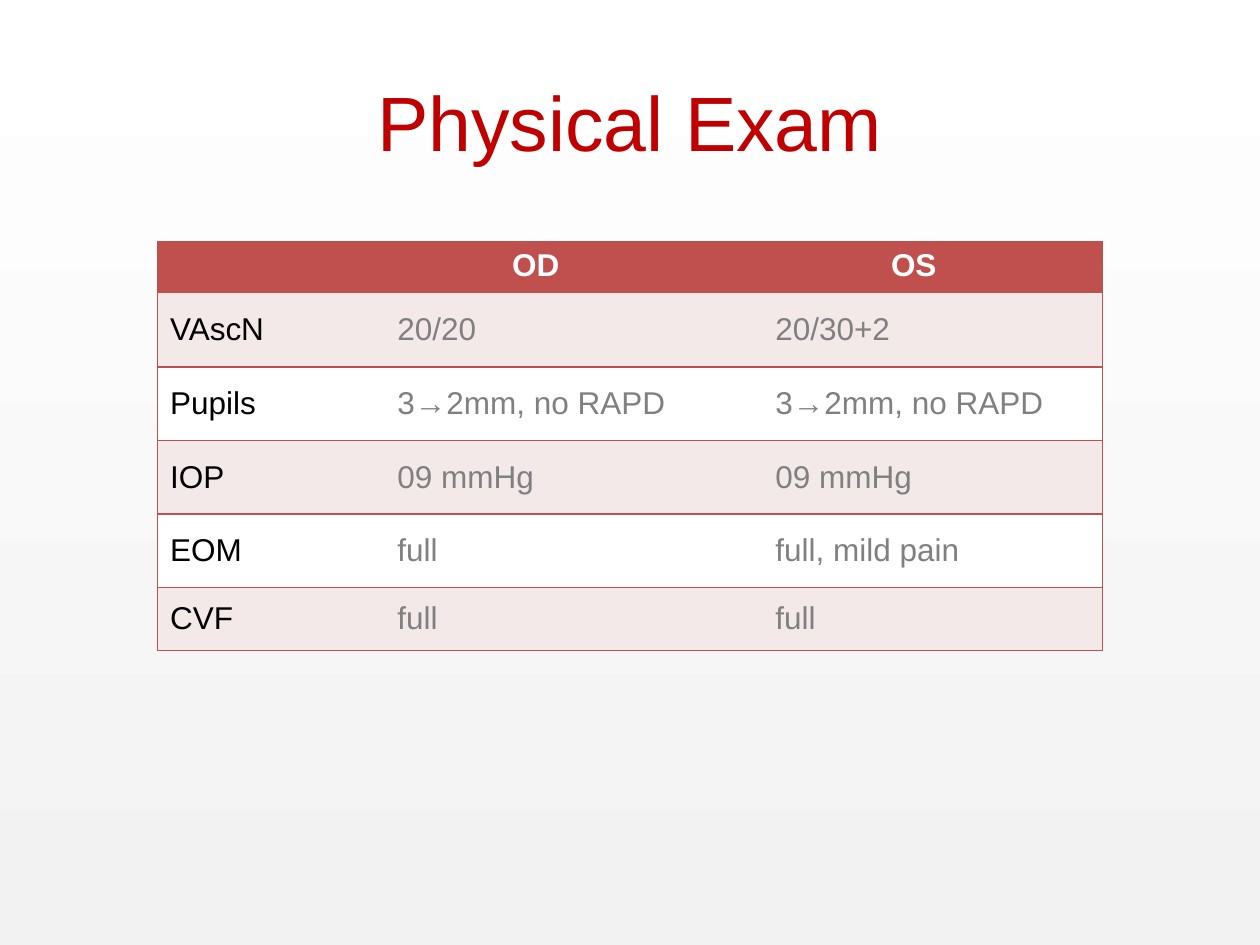
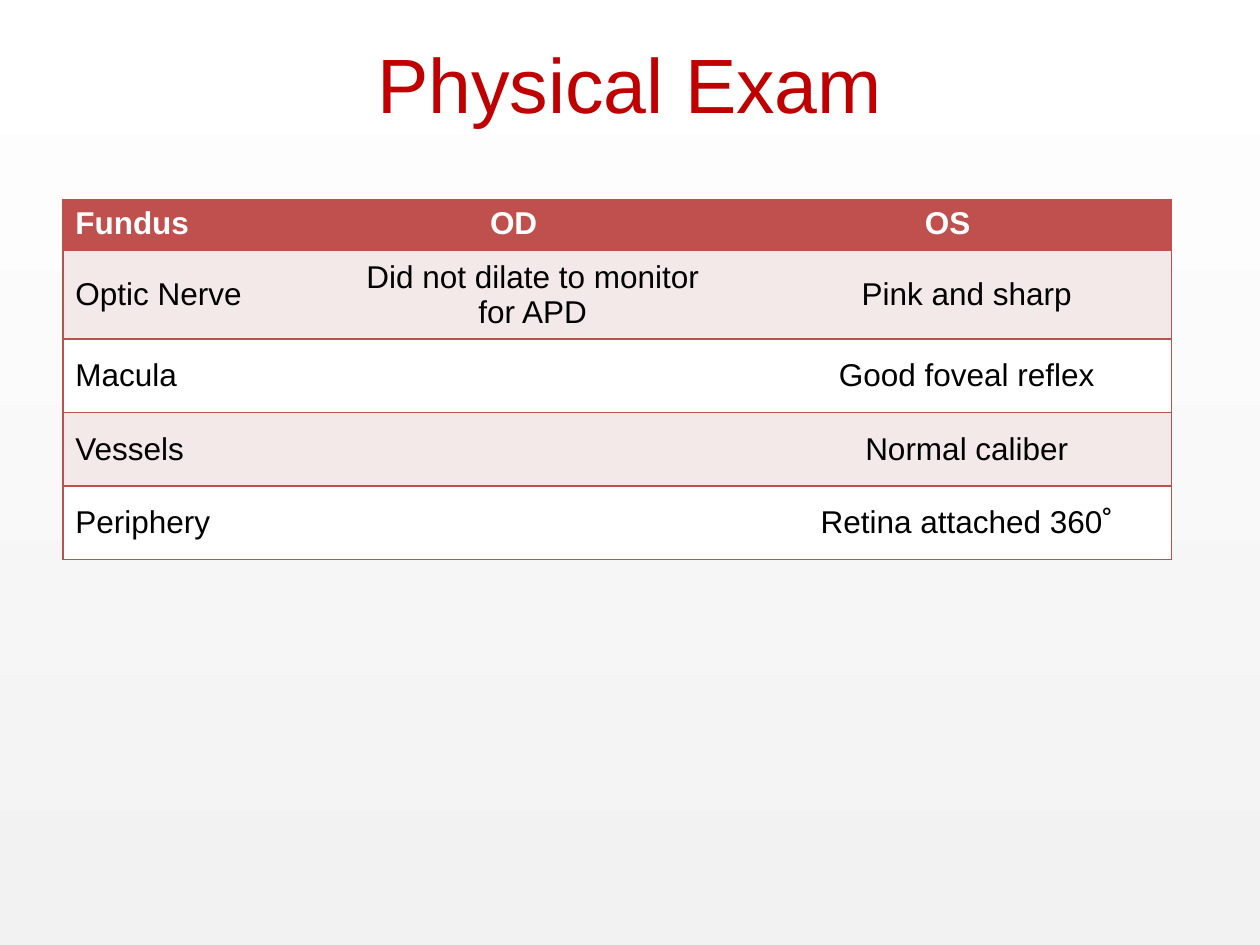
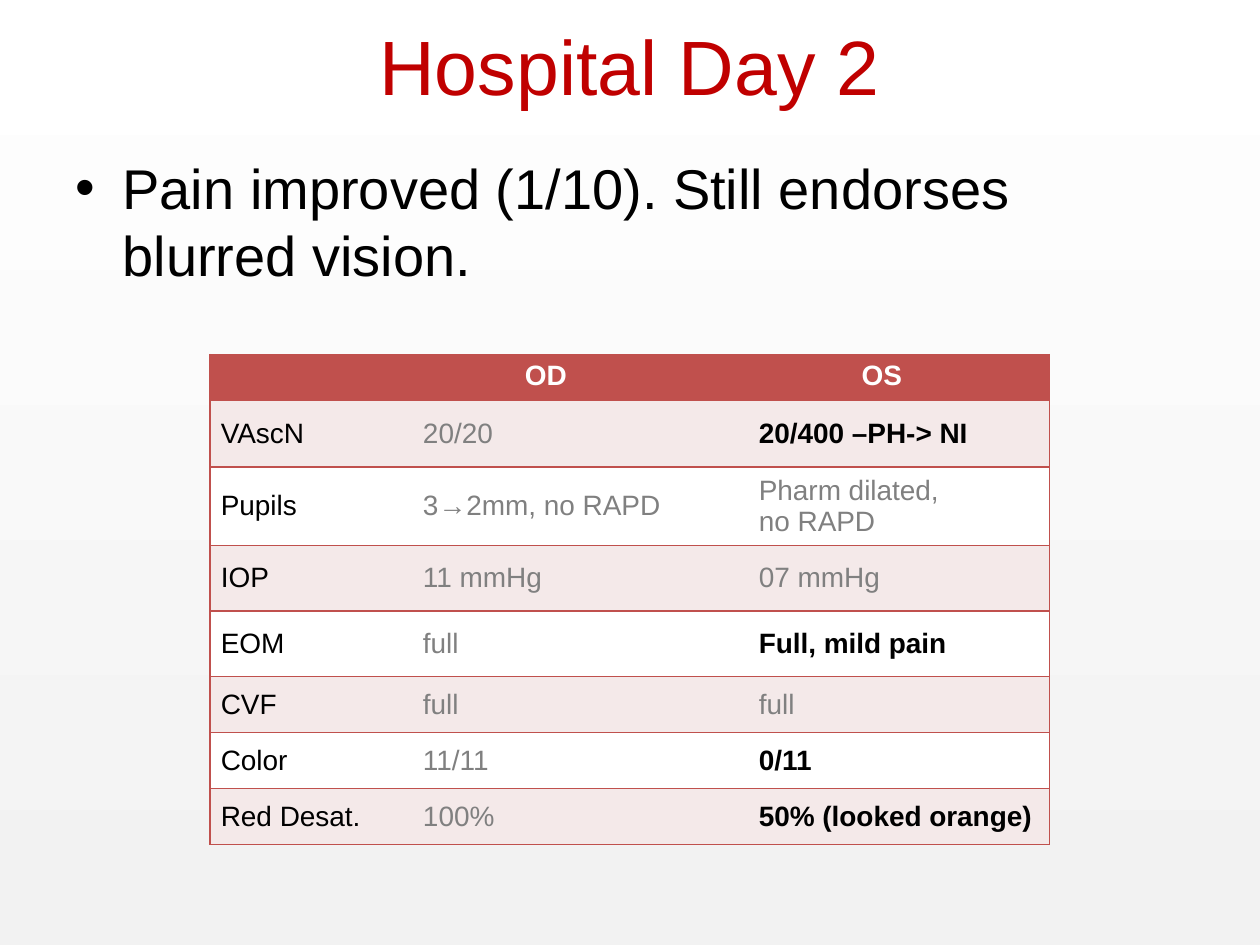
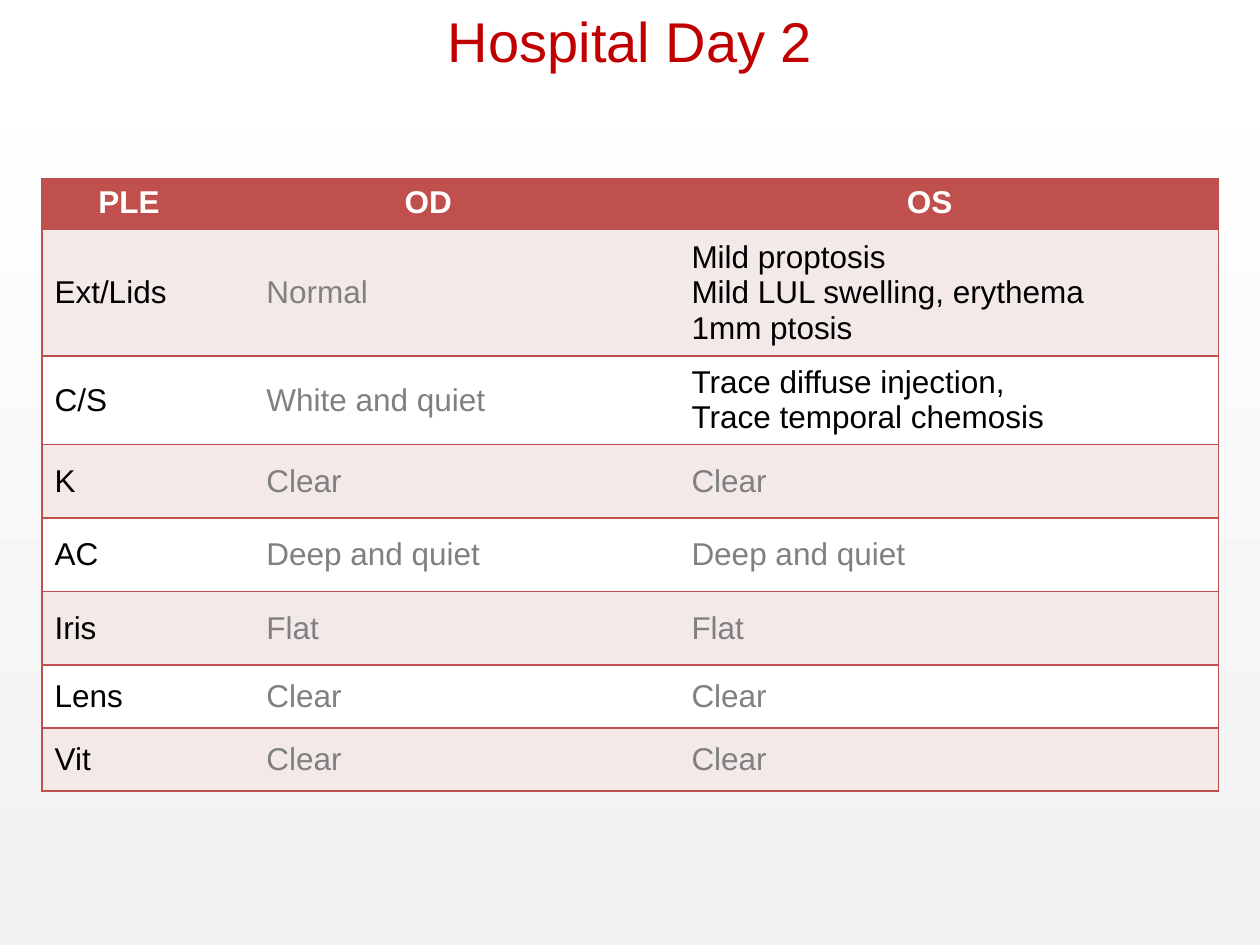
from lxml import etree
from pptx import Presentation
from pptx.dml.color import RGBColor
from pptx.enum import text as t
from pptx.oxml import ns
from pptx.util import Cm, Pt

FONT = "Arial"
TITLE_RED = RGBColor(0xC0, 0x00, 0x00)
TABLE_RED = RGBColor(0xC0, 0x50, 0x4D)
BAND_PINK = RGBColor(0xF4, 0xE9, 0xE9)
WHITE = RGBColor(0xFF, 0xFF, 0xFF)
PALE_GREY = RGBColor(0xF2, 0xF2, 0xF2)
GREY = RGBColor(0x80, 0x80, 0x80)
BLACK = RGBColor(0, 0, 0)

LEFT, CENTER = t.PP_ALIGN.LEFT, t.PP_ALIGN.CENTER
TOP, MIDDLE = t.MSO_ANCHOR.TOP, t.MSO_ANCHOR.MIDDLE


class ExamDeck:
    """Style of the deck, and the slide being filled."""

    def __init__(self):
        self.prs = Presentation()
        self.prs.slide_width, self.prs.slide_height = Cm(25.4), Cm(19.05)
        self.slide = None
        # Shared background: pale grey at the bottom, white at the top
        fill = self.prs.slide_master.background.fill
        fill.gradient()
        fill.gradient_angle = 90
        for stop, color in zip(fill.gradient_stops, (PALE_GREY, WHITE)):
            stop.color.rgb = color

    def new_slide(self, title, top, left=1.27, width=22.86, height=3.18, size=44):
        self.slide = self.prs.slides.add_slide(self.prs.slide_layouts[6])
        frame = self.text_box(left, top, width, height, MIDDLE)
        self.set_text(frame, title, size, TITLE_RED, align=CENTER)

    def text_box(self, left, top, width, height, anchor):
        box = self.slide.shapes.add_textbox(Cm(left), Cm(top), Cm(width), Cm(height))
        box.text_frame.word_wrap = True
        box.text_frame.vertical_anchor = anchor
        return box.text_frame

    def set_text(self, frame, content, size, color, bold=False, align=LEFT):
        frame.text = content
        look = {"name": FONT, "size": Pt(size), "bold": bold}
        for paragraph in frame.paragraphs:
            paragraph.alignment = align
            for run in paragraph.runs:
                for key, value in look.items():
                    setattr(run.font, key, value)
                run.font.color.rgb = color
            if not paragraph.runs:  # keeps an empty cell from growing its row
                etree.SubElement(paragraph._p, ns.qn("a:endParaRPr"), sz=str(size * 100))

    def bullet(self, content, left, top, width, height):
        frame = self.text_box(left, top, width, height, TOP)
        self.set_text(frame, content, 32, BLACK)
        props = frame.paragraphs[0]._p.get_or_add_pPr()
        indent = Cm(0.95)
        props.set("marL", str(indent))
        props.set("indent", str(-indent))
        etree.SubElement(props, ns.qn("a:buFont"), typeface=FONT)
        etree.SubElement(props, ns.qn("a:buChar"), char="•")

    def borders(self, cell, colored_sides):
        """Red rules on the given sides (of L, R, T, B), none on the others."""
        props = cell._tc.get_or_add_tcPr()
        for side in "LRTB":
            line = etree.SubElement(props, ns.qn(f"a:ln{side}"), w=str(Pt(1)))
            if side in colored_sides:
                solid = etree.SubElement(line, ns.qn("a:solidFill"))
                etree.SubElement(solid, ns.qn("a:srgbClr"), val=str(TABLE_RED))
            else:
                etree.SubElement(line, ns.qn("a:noFill"))

    def exam_table(self, rows, left, top, widths, heights, size=18, scale=1.0,
                   corner_align=CENTER, finding_color=GREY, finding_align=LEFT,
                   noted=(), noted_bold=False):
        """Eye findings; cells in noted (row, column) stand out in black."""
        table = self.slide.shapes.add_table(
            len(rows), len(widths), Cm(left), Cm(top),
            Cm(sum(widths)), Cm(sum(heights))).table
        table.horz_banding = False
        for column, width in zip(table.columns, widths):
            column.width = Cm(width)
        for row, height in zip(table.rows, heights):
            row.height = Cm(height)

        last = len(widths) - 1
        for r, entries in enumerate(rows):
            for c, entry in enumerate(entries):
                cell = table.cell(r, c)
                is_finding = r > 0 and c > 0
                self.borders(cell, "TB" + "L" * (c == 0) + "R" * (c == last))
                cell.fill.solid()
                cell.fill.fore_color.rgb = (
                    TABLE_RED if r == 0 else BAND_PINK if r % 2 else WHITE)
                layout = {
                    "margin_left": Cm((1.02 if is_finding else 0.25) * scale),
                    "margin_right": Cm(0.25 * scale),
                    "margin_top": Cm(0.13 * scale),
                    "margin_bottom": Cm(0.13 * scale),
                    "vertical_anchor": MIDDLE if r else TOP,
                }
                for key, value in layout.items():
                    setattr(cell, key, value)
                if r == 0:
                    look = {"color": WHITE, "bold": True,
                            "align": CENTER if c else corner_align}
                elif c == 0:
                    look = {"color": BLACK}
                elif (r, c) in noted:
                    look = {"color": BLACK, "bold": noted_bold, "align": finding_align}
                else:
                    look = {"color": finding_color, "align": finding_align}
                self.set_text(cell.text_frame, entry, size, **look)


def main():
    deck = ExamDeck()

    # Vision, pupils and pressure on admission
    deck.new_slide("Physical Exam", top=0.84)
    deck.exam_table(
        [("", "OD", "OS"),
         ("VAscN", "20/20", "20/30+2"),
         ("Pupils", "3→2mm, no RAPD", "3→2mm, no RAPD"),
         ("IOP", "09 mmHg", "09 mmHg"),
         ("EOM", "full", "full, mild pain"),
         ("CVF", "full", "full")],
        left=3.18, top=4.87, widths=[3.81, 7.62, 7.62],
        heights=[1.03, 1.5] + [1.48] * 3 + [1.27])

    # Fundus on admission
    deck.new_slide("Physical Exam", top=0.08)
    deck.exam_table(
        [("Fundus", "OD", "OS"),
         ("Optic Nerve", "Did not dilate to monitor for APD", "Pink and sharp"),
         ("Macula", "", "Good foveal reflex"),
         ("Vessels", "", "Normal caliber"),
         ("Periphery", "", "Retina attached 360˚")],
        left=1.27, top=4.02, widths=[4.85, 8.47, 9.03],
        heights=[1.03, 1.5] + [1.48] * 3,
        corner_align=LEFT, finding_color=BLACK, finding_align=CENTER)

    # Day 2: symptoms and vision
    deck.new_slide("Hospital Day 2", top=-0.28)
    deck.bullet("Pain improved (1/10). Still endorses blurred vision.",
                left=1.27, top=2.97, width=22.86, height=14.05)
    deck.exam_table(
        [("", "OD", "OS"),
         ("VAscN", "20/20", "20/400 –PH-> NI"),
         ("Pupils", "3→2mm, no RAPD", "Pharm dilated,\nno RAPD"),
         ("IOP", "11 mmHg", "07 mmHg"),
         ("EOM", "full", "Full, mild pain"),
         ("CVF", "full", "full"),
         ("Color", "11/11", "0/11"),
         ("Red Desat.", "100%", "50% (looked orange)")],
        left=4.23, top=7.15, widths=[3.39, 6.77, 6.77],
        heights=[0.92, 1.34] + [1.32] * 3 + [1.13] * 3,
        size=16, scale=0.89,
        noted={(1, 2), (4, 2), (6, 2), (7, 2)}, noted_bold=True)

    # Day 2: external and slit lamp findings
    deck.new_slide("Hospital Day 2", top=0.2, left=2.97, width=19.47,
                   height=1.2, size=32)
    deck.exam_table(
        [("PLE", "OD", "OS"),
         ("Ext/Lids", "Normal",
          "Mild proptosis\nMild LUL swelling, erythema\n1mm ptosis"),
         ("C/S", "White and quiet",
          "Trace diffuse injection,\nTrace temporal chemosis"),
         ("K", "Clear", "Clear"),
         ("AC", "Deep and quiet", "Deep and quiet"),
         ("Iris", "Flat", "Flat"),
         ("Lens", "Clear", "Clear"),
         ("Vit", "Clear", "Clear")],
        left=0.85, top=3.6, widths=[3.5, 8.57, 11.64],
        heights=[1.03, 2.13] + [1.48] * 4 + [1.27] * 2,
        noted={(1, 2), (2, 2)})

    deck.prs.save("out.pptx")


if __name__ == "__main__":
    main()
